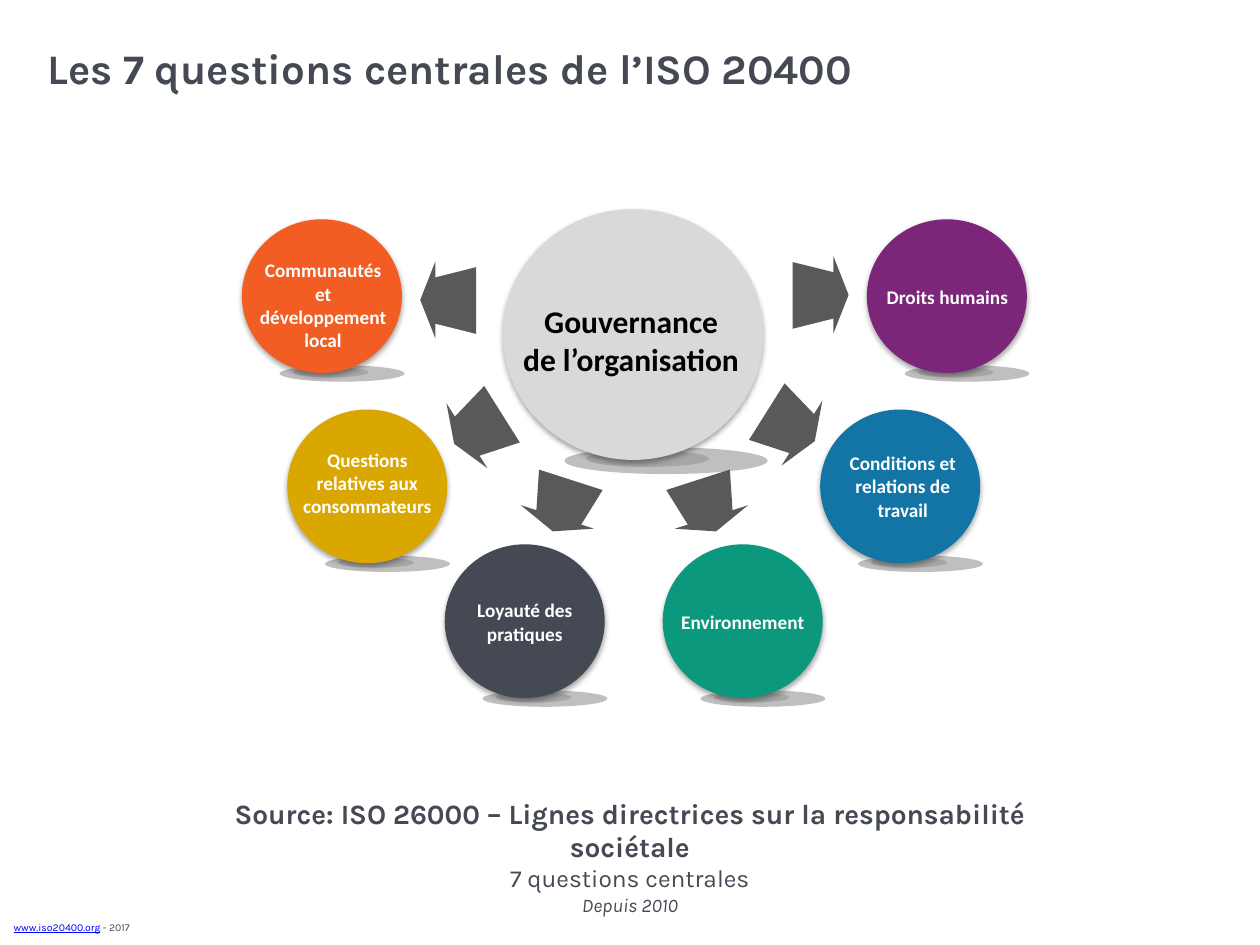
from dataclasses import dataclass

from lxml.etree import SubElement
from pptx import Presentation
from pptx.dml.color import RGBColor
from pptx.enum.shapes import MSO_SHAPE
from pptx.enum.text import MSO_ANCHOR, MSO_AUTO_SIZE, PP_ALIGN
from pptx.oxml.ns import qn
from pptx.util import Inches, Pt


@dataclass(frozen=True)
class Theme:
    """Colours, fonts and type sizes of the slide."""
    ink: str = "444953"
    link: str = "0000FF"
    black: str = "000000"
    white: str = "FFFFFF"
    arrow: str = "595959"
    hub: str = "D9D9D9"
    floor: str = "BFBFBF"
    core: str = "A6A6A6"
    heading: str = "Karla"
    label: str = "Calibri"
    title_pt: int = 24
    hub_pt: int = 18
    source_pt: int = 16
    sub_pt: int = 14
    label_pt: int = 11
    footer_pt: int = 6


T = Theme()
TITLE = "Les 7 questions centrales de l’ISO 20400"
SOURCE = [
    ("Source: ISO 26000 – Lignes directrices sur la responsabilité sociétale",
     T.source_pt, True, False),
    ("7 questions centrales", T.sub_pt, False, False),
    ("Depuis 2010", T.label_pt, False, True),
]
FOOTER = [("www.iso20400.org", T.link, True), (" - 2017", T.ink, False)]

DISC_W, DISC_H = 1.27, 1.22
HUB = ("Gouvernance\nde l’organisation", 3.99, 1.66, 2.07, 1.99)
HUB_LABEL = (3.93, 2.34, 2.16, 0.71)
TOPICS = [
    ("Loyauté des pratiques", "444953", 3.53, 4.32, (3.52, 4.7, 1.29, 0.47)),
    ("Questions relatives aux consommateurs", "DAA600", 2.28, 3.25,
     (2.27, 3.5, 1.29, 0.66)),
    ("Communautés\net développement local", "F15D22", 1.92, 1.74,
     (1.9, 2, 1.33, 0.84)),
    ("Environnement", "0B987C", 5.26, 4.32, (5.25, 4.79, 1.29, 0.29)),
    ("Conditions et relations de travail", "1275A5", 6.51, 3.25,
     (6.52, 3.53, 1.29, 0.66)),
    ("Droits humains", "7C267A", 6.88, 1.74, (6.92, 2.21, 1.2, 0.29)),
]

AXIS = 5.035
ARROWS = [
    {"angle": 90, "body": (6.455, 2.345), "head": (6.675, 2.34), "drop": 0.04},
    {"angle": 122.2, "body": (6.225, 3.355), "head": (6.415, 3.47), "drop": 0.02},
    {"angle": 162.2, "body": (5.59, 3.965), "head": (5.665, 4.16), "drop": 0},
]
PARTS = {"body": (MSO_SHAPE.TRAPEZOID, 0.53, 0.33),
         "head": (MSO_SHAPE.ISOSCELES_TRIANGLE, 0.61, 0.12)}


def add_fill(s, kind, box, color):
    sp = s.shapes.add_shape(kind, *map(Inches, box))
    sp.shadow.inherit = False
    sp.fill.solid()
    sp.fill.fore_color.rgb = RGBColor.from_string(color)
    sp.line.fill.background()
    return sp


def add_soft_shadow(sp):
    effects = sp.element.spPr.find(qn("a:effectLst"))
    shadow = SubElement(effects, qn("a:outerShdw"), blurRad=str(Pt(3.1)),
                        dist=str(Pt(1.8)), dir="5400000", rotWithShape="0")
    color = SubElement(shadow, qn("a:srgbClr"), val=T.black)
    SubElement(color, qn("a:alpha"), val="35000")


def add_disc(s, x, y, w, h, color):
    k = w / DISC_W
    floor = (x + 0.3 * k, y + 1.16 * k, 0.99 * k, 0.13 * k)
    core = (x + 0.405 * k, y + 1.175 * k, 0.6 * k, 0.08 * k)
    add_fill(s, MSO_SHAPE.OVAL, floor, T.floor)
    add_fill(s, MSO_SHAPE.OVAL, core, T.core)
    add_soft_shadow(add_fill(s, MSO_SHAPE.OVAL, (x, y, w, h), color))


def add_arrow_pair(s, arrow):
    for name, (kind, w, h) in PARTS.items():
        cx, cy = arrow[name]
        sides = [(cx, cy, arrow["angle"]),
                 (2 * AXIS - cx, cy + arrow["drop"], 360 - arrow["angle"])]
        for x, y, angle in sides:
            sp = add_fill(s, kind, (x - w / 2, y - h / 2, w, h), T.arrow)
            sp.rotation = angle


def style(font, name, size, color, bold=False, italic=False):
    font.name, font.size = name, Pt(size)
    font.bold, font.italic = bold, italic
    font.color.rgb = RGBColor.from_string(color)


def add_frame(s, box, anchor=MSO_ANCHOR.TOP):
    tf = s.shapes.add_textbox(*map(Inches, box)).text_frame
    tf.word_wrap = True
    tf.auto_size = MSO_AUTO_SIZE.SHAPE_TO_FIT_TEXT
    tf.vertical_anchor = anchor
    return tf


def add_lines(tf, lines, name, color, align):
    for i, (text, size, bold, italic) in enumerate(lines):
        p = tf.add_paragraph() if i else tf.paragraphs[0]
        p.text, p.alignment = text, align
        style(p.font, name, size, color, bold, italic)


def add_label(s, text, box, size, color):
    lines = [(line, size, True, False) for line in text.split("\n")]
    add_lines(add_frame(s, box, MSO_ANCHOR.MIDDLE), lines, T.label, color,
              PP_ALIGN.CENTER)


def add_footer(s):
    p = add_frame(s, (0.01, 7.26, 6.47, 0.2)).paragraphs[0]
    for text, color, underline in FOOTER:
        r = p.add_run()
        r.text = text
        style(r.font, T.heading, T.footer_pt, color)
        r.font.underline = underline


def main():
    """Build the slide on the central questions of ISO 20400."""
    prs = Presentation()
    prs.slide_width, prs.slide_height = Inches(10), Inches(7.5)
    s = prs.slides.add_slide(prs.slide_layouts[6])

    add_footer(s)
    add_lines(add_frame(s, (0.28, 0.29, 6.69, 0.5)),
              [(TITLE, T.title_pt, True, False)], T.heading, T.ink, PP_ALIGN.LEFT)
    add_lines(add_frame(s, (1.3, 6.27, 7.4, 0.79)), SOURCE, T.heading, T.ink,
              PP_ALIGN.CENTER)

    hub_text, *hub_box = HUB
    add_disc(s, *hub_box, T.hub)
    for _, color, x, y, _ in TOPICS:
        add_disc(s, x, y, DISC_W, DISC_H, color)
    for arrow in ARROWS:
        add_arrow_pair(s, arrow)
    add_label(s, hub_text, HUB_LABEL, T.hub_pt, T.black)
    for text, _, _, _, box in TOPICS:
        add_label(s, text, box, T.label_pt, T.white)

    prs.save("out.pptx")


if __name__ == "__main__":
    main()
